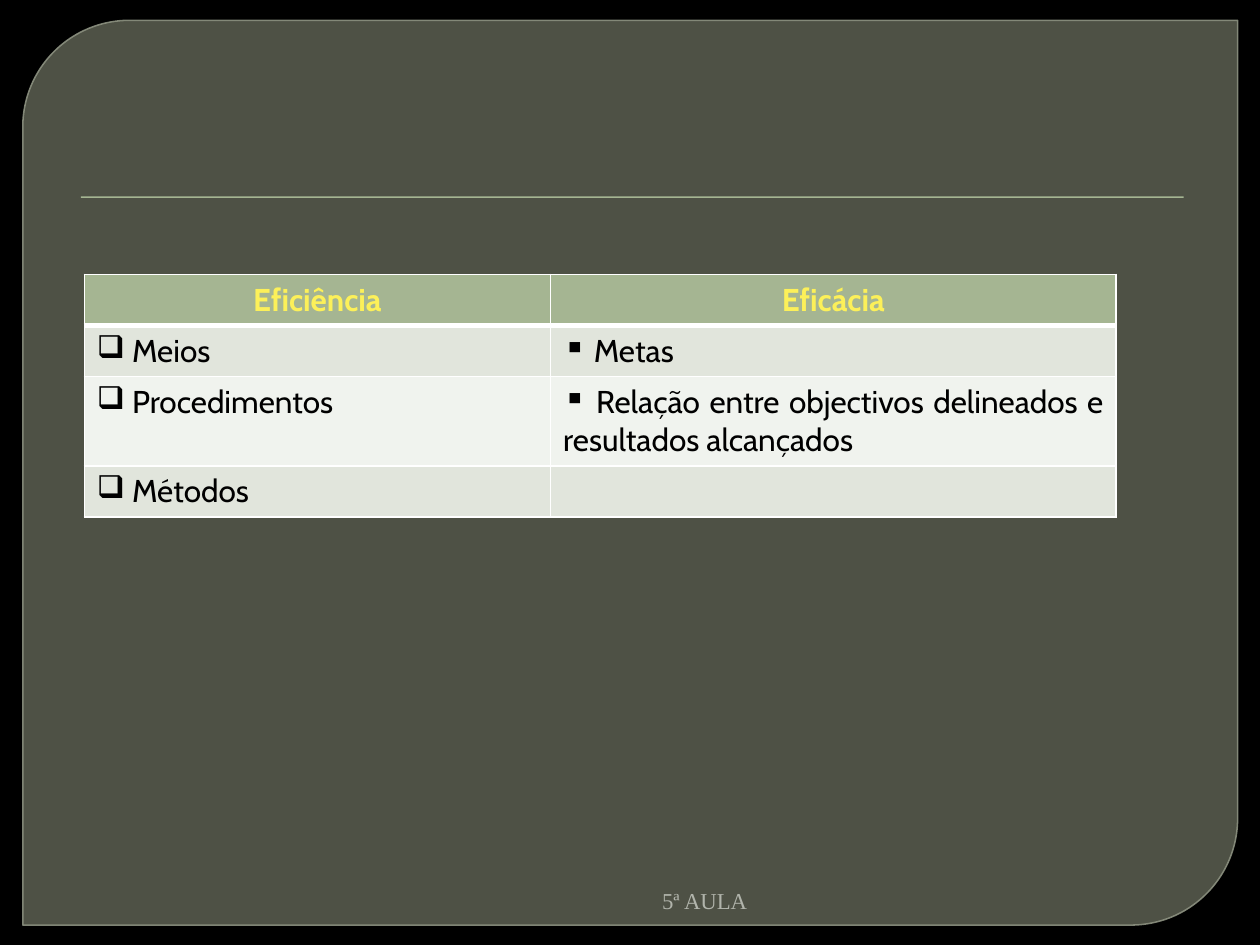
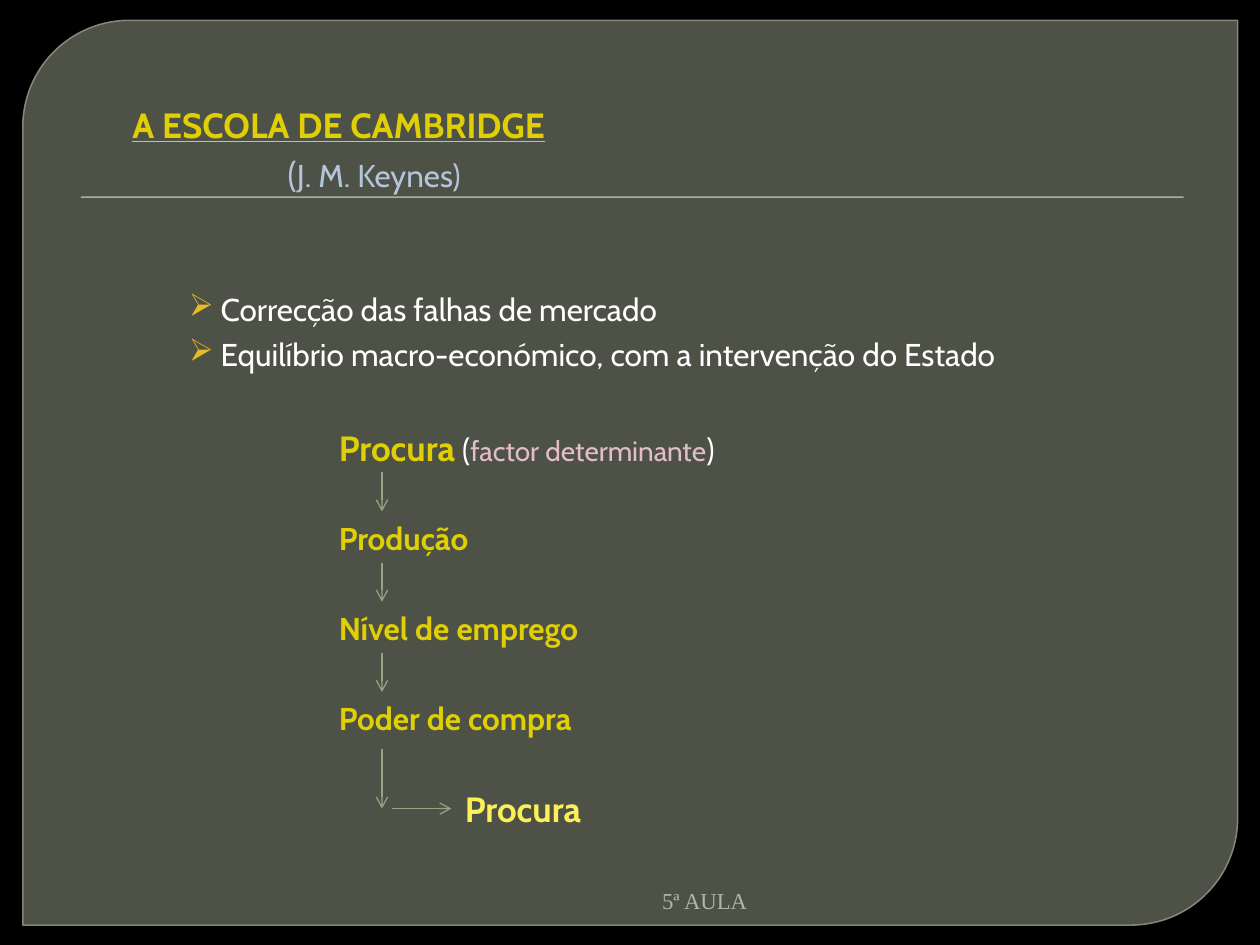
"""Builds two lecture slides on efficiency, effectiveness and the Cambridge school."""
import lxml.etree
import pptx
import pptx.dml.color
import pptx.enum.shapes
import pptx.enum.text
import pptx.oxml.ns
import pptx.util

Cm, Pt = pptx.util.Cm, pptx.util.Pt
RGBColor = pptx.dml.color.RGBColor
MSO_SHAPE = pptx.enum.shapes.MSO_SHAPE
PP_ALIGN = pptx.enum.text.PP_ALIGN
MIDDLE = pptx.enum.text.MSO_ANCHOR.MIDDLE
qn = pptx.oxml.ns.qn

BLACK = RGBColor(0x00, 0x00, 0x00)
WHITE = RGBColor(0xFF, 0xFF, 0xFF)
PANEL = RGBColor(0x78, 0x7D, 0x6B)
PANEL_EDGE = RGBColor(0x8F, 0x94, 0x83)
SAGE = RGBColor(0xA5, 0xB5, 0x92)
BAND_DARK = RGBColor(0xE1, 0xE5, 0xDC)
BAND_LIGHT = RGBColor(0xF0, 0xF3, 0xEE)
ARROW = RGBColor(0x96, 0xA4, 0x85)
FOOTER_GREY = RGBColor(0xB1, 0xB4, 0xAB)
GOLD = RGBColor(0xDF, 0xCF, 0x04)
LEMON = RGBColor(0xFC, 0xF0, 0x59)
BLUE = RGBColor(0xB3, 0xC5, 0xDA)
PINK = RGBColor(0xE3, 0xBE, 0xCA)
BULLET = RGBColor(0xE7, 0xBC, 0x29)

FOOTER = "5ª AULA"
TABLE_HEAD = ["Eficiência", "Eficácia"]
TABLE_BULLETS = ["❑", "▪"]
TABLE_ROWS = [
    ["Meios", "Metas"],
    ["Procedimentos", "Relação entre objectivos delineados e resultados alcançados"],
    ["Métodos", ""],
]
COL_WIDTHS = [9.4, 11.4]
ROW_HEIGHTS = [1.03, 1.03, 1.8, 1.03]

TITLE = "A ESCOLA DE CAMBRIDGE"
AUTHOR = [("(", dict(size=20)), ("J. M. Keynes)", {})]
POINTS = ["Correcção das falhas de mercado",
          "Equilíbrio macro-económico, com a intervenção do Estado"]
STRONG = dict(color=GOLD, bold=True)
CHAIN = [
    [("Procura", dict(STRONG, size=20)), (" (", {}),
     ("factor determinante", dict(size=16, color=PINK)), (")", {})],
    [("Produção", STRONG)],
    [("Nível de emprego", STRONG)],
    [("Poder de compra", STRONG)],
]
RESULT = "Procura"

POINTS_Y, POINTS_STEP = 6.23, 0.91
CHAIN_X, CHAIN_Y, CHAIN_STEP = 6.83, 9.02, 1.82
ARROW_X, ARROW_GAP, ARROW_LEN = 7.7, 0.5, 0.79
LINE_H = 1


def sub(parent, tag, **attrs):
    return lxml.etree.SubElement(parent, qn(tag), attrs)


def add_text(p, text, size=18, font="Cabin", color=WHITE, bold=False,
             underline=False, align=None):
    r = p.add_run()
    r.text = text
    r.font.size, r.font.name = Pt(size), font
    r.font.color.rgb = color
    r.font.bold, r.font.underline = bold, underline
    if align is not None:
        p.alignment = align


def set_bullet(p, char, hang=0, color=None):
    pPr = p._p.get_or_add_pPr()
    pPr.set("marL", str(Cm(hang)))
    pPr.set("indent", str(-Cm(hang)))
    if color is not None:
        sub(sub(pPr, "a:buClr"), "a:srgbClr", val=str(color))
    sub(pPr, "a:buChar", char=char)


def add_line(slide, x, mid, width=15):
    box = slide.shapes.add_textbox(Cm(x), Cm(mid - LINE_H / 2), Cm(width), Cm(LINE_H))
    tf = box.text_frame
    tf.word_wrap, tf.vertical_anchor = True, MIDDLE
    tf.margin_left = tf.margin_right = tf.margin_top = tf.margin_bottom = 0
    return tf.paragraphs[0]


def add_runs(p, runs, **base):
    for text, style in runs:
        add_text(p, text, **{**base, **style})


def set_alpha(fill_owner, percent):
    for clr in fill_owner.iter(qn("a:srgbClr")):
        sub(clr, "a:alpha", val=str(percent * 1000))


def add_shape(slide, kind, x, y, w, h, color):
    sp = slide.shapes.add_shape(kind, Cm(x), Cm(y), Cm(w), Cm(h))
    sp.shadow.inherit = False
    sp.fill.solid()
    sp.fill.fore_color.rgb = color
    sp.line.fill.background()
    return sp


def add_base_slide(prs):
    slide = prs.slides.add_slide(prs.slide_layouts[6])
    slide.background.fill.solid()
    slide.background.fill.fore_color.rgb = BLACK
    panel = add_shape(slide, MSO_SHAPE.ROUND_2_DIAG_RECTANGLE, 0.46, 0.41, 24.49, 18.24, PANEL)
    panel.adjustments[0], panel.adjustments[1] = 0.118, 0
    spPr = panel._element.spPr
    set_alpha(spPr, 65)
    panel.line.color.rgb = PANEL_EDGE
    panel.line.width = Pt(0.87)
    set_alpha(spPr.find(qn("a:ln")), 88)
    add_shape(slide, MSO_SHAPE.RECTANGLE, 1.63, 3.96, 22.23, 0.03, SAGE)
    add_text(add_line(slide, 3.61, 18.16, 11.45), FOOTER, size=13, font="Times New Roman",
             color=FOOTER_GREY, align=PP_ALIGN.RIGHT)
    return slide


def add_arrow(slide, x1, y1, x2, y2):
    cxn = slide.shapes.add_connector(pptx.enum.shapes.MSO_CONNECTOR.STRAIGHT,
                                     Cm(x1), Cm(y1), Cm(x2), Cm(y2))
    cxn.line.color.rgb = ARROW
    cxn.line.width = Pt(0.75)
    spPr = cxn._element.spPr
    sub(spPr.find(qn("a:ln")), "a:tailEnd", type="arrow")
    sub(spPr, "a:effectLst")


def style_cell(cell, color, top=1, bottom=1):
    cell.fill.solid()
    cell.fill.fore_color.rgb = color
    tcPr = cell._tc.get_or_add_tcPr()
    edges = [("a:lnL", 1), ("a:lnR", 1), ("a:lnT", top), ("a:lnB", bottom)]
    for i, (tag, width) in enumerate(edges):
        ln = sub(tcPr, tag, w=str(Pt(width)))
        sub(sub(ln, "a:solidFill"), "a:srgbClr", val=str(WHITE))
        tcPr.insert(i, ln)


def build_comparison(prs):
    slide = add_base_slide(prs)
    table = slide.shapes.add_table(len(ROW_HEIGHTS), len(COL_WIDTHS), Cm(1.7), Cm(5.53),
                                   Cm(sum(COL_WIDTHS)), Cm(sum(ROW_HEIGHTS))).table
    for col, width in zip(table.columns, COL_WIDTHS):
        col.width = Cm(width)
    for row, height in zip(table.rows, ROW_HEIGHTS):
        row.height = Cm(height)
    for c, head in enumerate(TABLE_HEAD):
        cell = table.cell(0, c)
        style_cell(cell, SAGE, bottom=3)
        add_text(cell.text_frame.paragraphs[0], head, color=LEMON, bold=True,
                 align=PP_ALIGN.CENTER)
    for r, texts in enumerate(TABLE_ROWS, 1):
        for c, text in enumerate(texts):
            cell = table.cell(r, c)
            style_cell(cell, BAND_DARK if r % 2 else BAND_LIGHT, top=3 if r == 1 else 1)
            if text:
                p = cell.text_frame.paragraphs[0]
                add_text(p, " " + text, color=BLACK,
                         align=PP_ALIGN.JUSTIFY if c else PP_ALIGN.LEFT)
                set_bullet(p, TABLE_BULLETS[c])


def build_cambridge(prs):
    slide = add_base_slide(prs)
    add_text(add_line(slide, 2.67, 2.5), TITLE, size=20, underline=True, **STRONG)
    add_runs(add_line(slide, 5.8, 3.5), AUTHOR, color=BLUE)
    for i, point in enumerate(POINTS):
        p = add_line(slide, 3.81, POINTS_Y + i * POINTS_STEP, 19)
        add_text(p, point)
        set_bullet(p, "➢", hang=0.64, color=BULLET)
    for i, runs in enumerate(CHAIN):
        add_runs(add_line(slide, CHAIN_X, CHAIN_Y + i * CHAIN_STEP), runs)
    result_y = CHAIN_Y + len(CHAIN) * CHAIN_STEP
    add_text(add_line(slide, CHAIN_X + 2.54, result_y), RESULT, size=20, color=LEMON, bold=True)
    for i in range(len(CHAIN) - 1):
        top = CHAIN_Y + i * CHAIN_STEP + ARROW_GAP
        add_arrow(slide, ARROW_X, top, ARROW_X, top + ARROW_LEN)
    add_arrow(slide, ARROW_X, result_y - 1.2, ARROW_X, result_y)
    add_arrow(slide, ARROW_X + 0.2, result_y, ARROW_X + 1.4, result_y)


def main():
    prs = pptx.Presentation()
    prs.slide_width, prs.slide_height = Cm(25.4), Cm(19.05)
    build_comparison(prs)
    build_cambridge(prs)
    prs.save("out.pptx")


if __name__ == "__main__":
    main()
